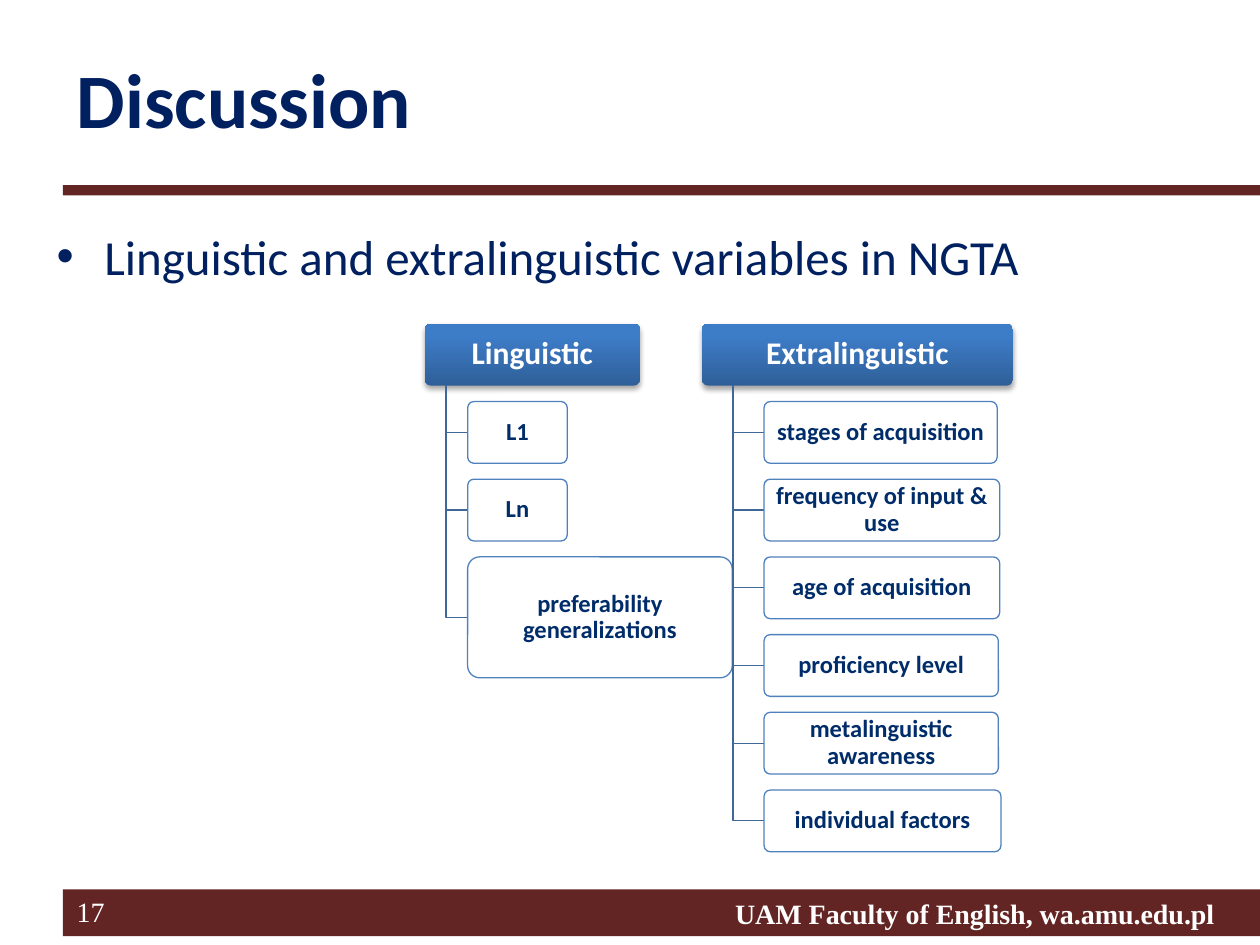
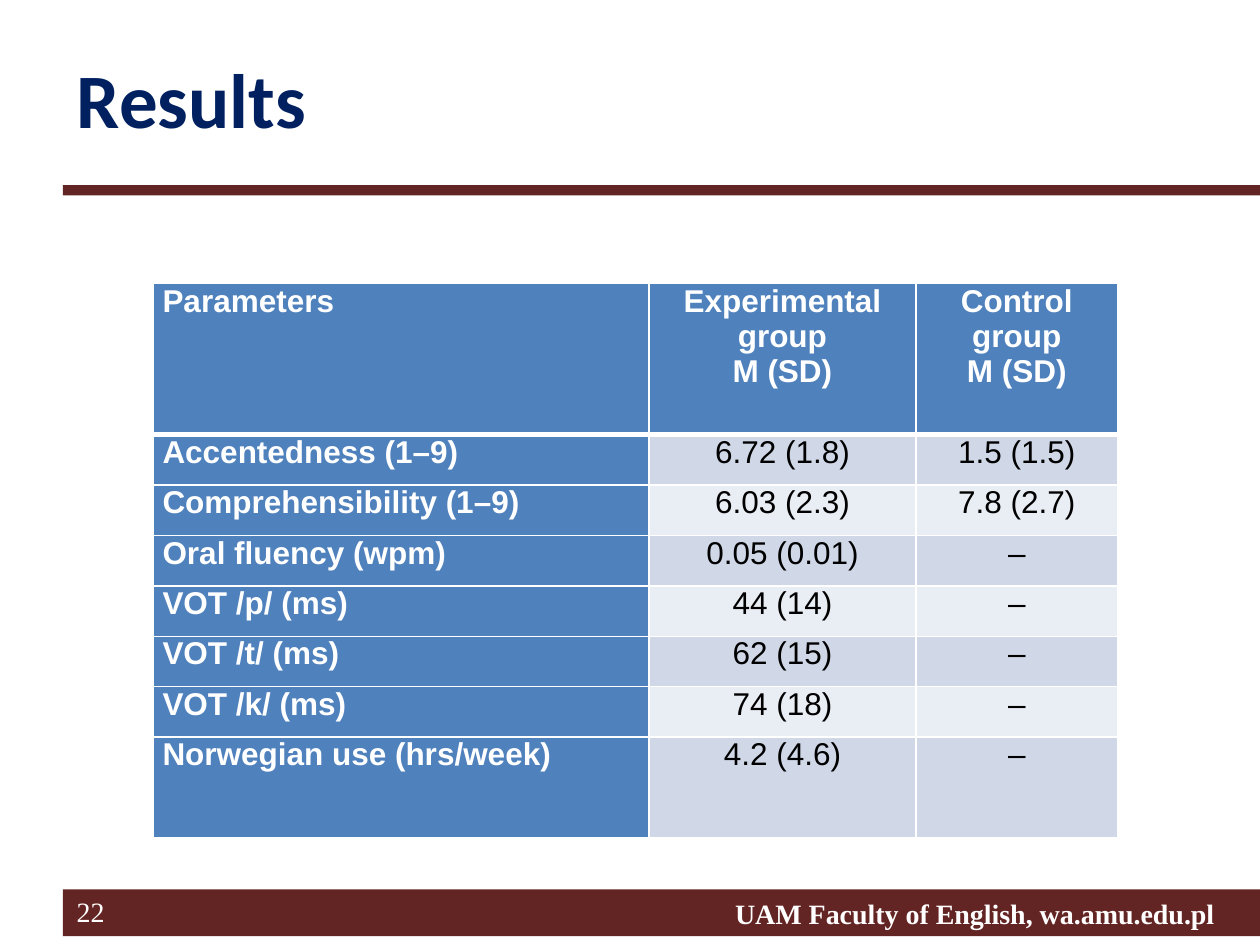
from lxml import etree
from pptx import Presentation
from pptx.dml.color import RGBColor
from pptx.enum.shapes import MSO_SHAPE
from pptx.enum.text import MSO_ANCHOR, PP_ALIGN
from pptx.oxml import parse_xml
from pptx.oxml.ns import nsdecls, qn
from pptx.util import Inches, Pt

RECTANGLE, ROUNDED = MSO_SHAPE.RECTANGLE, MSO_SHAPE.ROUNDED_RECTANGLE
TOP, MIDDLE = MSO_ANCHOR.TOP, MSO_ANCHOR.MIDDLE
LEFT, CENTER, RIGHT, JUSTIFY = PP_ALIGN.LEFT, PP_ALIGN.CENTER, PP_ALIGN.RIGHT, PP_ALIGN.JUSTIFY

COLORS = {
    "navy": "002060",
    "maroon": "632523",
    "white": "FFFFFF",
    "black": "000000",
    "blue": "4F81BD",
    "branch": "3F6797",
    "variable": "002D69",
    "header_dark": "2F5F99",
    "header_light": "3D7CC7",
    "odd_row": "D0D8E8",
    "even_row": "E9EDF4",
}


def rgb(name):
    return RGBColor.from_string(COLORS[name])


def style(frame, font, size, color, bold=False, align=LEFT, anchor=TOP):
    frame.word_wrap = True
    frame.vertical_anchor = anchor
    for paragraph in frame.paragraphs:
        paragraph.alignment = align
        paragraph.font.name = font
        paragraph.font.size = Pt(size)
        paragraph.font.bold = bold
        paragraph.font.color.rgb = rgb(color)


prs = Presentation()
prs.slide_width, prs.slide_height = Inches(10), Inches(7.5)

slides = []
for heading, number in [("Discussion", "17"), ("Results", "22")]:
    slide = prs.slides.add_slide(prs.slide_layouts[5])
    slides.append(slide)
    for top, height in [(7.06, 0.37), (1.47, 0.08)]:
        band = slide.shapes.add_shape(RECTANGLE, Inches(0.5), Inches(top), Inches(9.5), Inches(height))
        band.shadow.inherit = False
        band.fill.solid()
        band.fill.fore_color.rgb = rgb("maroon")
        band.line.fill.background()
        if top > 7:
            band.text_frame.text = "UAM Faculty of English, wa.amu.edu.pl"
            band.text_frame.margin_right = Inches(0.36)
            style(band.text_frame, "Times New Roman", 16, "white", True, RIGHT, MIDDLE)

    page = slide.shapes.add_textbox(Inches(0.51), Inches(7.05), Inches(1.34), Inches(0.37))
    page.text_frame.text = number
    style(page.text_frame, "Times New Roman", 16, "white")

    title = slide.shapes.title
    title.left, title.top, title.width, title.height = Inches(0.51), Inches(0.36), Inches(8.62), Inches(1.45)
    title.text_frame.text = heading
    style(title.text_frame, "Calibri", 44, "navy", True)

discussion, results = slides

topic = discussion.shapes.add_textbox(Inches(0.35), Inches(1.75), Inches(9.15), Inches(0.6))
topic.text_frame.text = "Linguistic and extralinguistic variables in NGTA"
bullet = topic.text_frame.paragraphs[0]._p.get_or_add_pPr()
bullet.set("marL", str(Inches(0.38)))
bullet.set("indent", str(-Inches(0.38)))
etree.SubElement(bullet, qn("a:buFont")).set("typeface", "Arial")
etree.SubElement(bullet, qn("a:buChar")).set("char", "•")
style(topic.text_frame, "Calibri", 28, "navy")

TREE_TOP, BOX_HEIGHT, ROW_STEP = 2.57, 0.49, 3.7 / 6
VARIABLES = [
    ("Linguistic", 3.37, 1.71, [
        ("L1", 0.79, BOX_HEIGHT),
        ("Ln", 0.79, BOX_HEIGHT),
        ("preferability generalizations", 2.1, 0.96),
    ]),
    ("Extralinguistic", 5.57, 2.47, [
        ("stages of acquisition", 1.85, BOX_HEIGHT),
        ("frequency of input & use", 1.87, BOX_HEIGHT),
        ("age of acquisition", 1.87, BOX_HEIGHT),
        ("proficiency level", 1.86, BOX_HEIGHT),
        ("metalinguistic awareness", 1.86, BOX_HEIGHT),
        ("individual factors", 1.88, BOX_HEIGHT),
    ]),
]

for group, group_left, group_width, members in VARIABLES:
    trunk = group_left + group_width * 0.1
    member_left = group_left + group_width * 0.2
    boxes = [(group, group_left, group_width, BOX_HEIGHT)]
    boxes += [(name, member_left, width, height) for name, width, height in members]
    for row, (name, left, width, height) in enumerate(boxes):
        top = TREE_TOP + row * ROW_STEP
        if row:
            middle = top + height / 2
            outline = discussion.shapes.build_freeform(
                Inches(trunk), Inches(TREE_TOP + BOX_HEIGHT))
            outline.add_line_segments(
                [(Inches(trunk), Inches(middle)), (Inches(left), Inches(middle))], close=False)
            branch = outline.convert_to_shape()
            branch.shadow.inherit = False
            branch.fill.background()
            branch.line.color.rgb = rgb("branch")
            branch.line.width = Pt(0.75)

        box = discussion.shapes.add_shape(ROUNDED, Inches(left), Inches(top), Inches(width), Inches(height))
        box.adjustments[0] = 0.1
        box.shadow.inherit = False
        frame = box.text_frame
        frame.text = name
        frame.margin_left = frame.margin_right = Inches(0.05)
        frame.margin_top = frame.margin_bottom = Inches(0.03)
        frame.paragraphs[0].line_spacing = 0.9
        if row:
            box.fill.solid()
            box.fill.fore_color.rgb = rgb("white")
            box.line.color.rgb = rgb("blue")
            box.line.width = Pt(0.75)
            style(frame, "Calibri", 14, "variable", True, CENTER, MIDDLE)
        else:
            box.fill.gradient()
            box.fill.gradient_angle = 90
            for stop, position, color in zip(
                    box.fill.gradient_stops, (0, 0.8), ("header_dark", "header_light")):
                stop.position = position
                stop.color.rgb = rgb(color)
            box.line.fill.background()
            box._element.spPr.find(qn("a:effectLst")).append(parse_xml(
                f'<a:outerShdw {nsdecls("a")} blurRad="{Pt(3.1)}" dist="{Pt(1.8)}" dir="5400000" '
                f'rotWithShape="0"><a:srgbClr val="{COLORS["black"]}"><a:alpha val="35000"/>'
                '</a:srgbClr></a:outerShdw>'))
            style(frame, "Calibri", 18, "white", True, CENTER, MIDDLE)

MEASURES = [
    ("Parameters", "Experimental group\nM (SD)", "Control group\nM (SD)"),
    ("Accentedness (1–9)", "6.72 (1.8)", "1.5 (1.5)"),
    ("Comprehensibility (1–9)", "6.03 (2.3)", "7.8 (2.7)"),
    ("Oral fluency (wpm)", "0.05 (0.01)", "–"),
    ("VOT /p/ (ms)", "44 (14)", "–"),
    ("VOT /t/ (ms)", "62 (15)", "–"),
    ("VOT /k/ (ms)", "74 (18)", "–"),
    ("Norwegian use (hrs/week)", "4.2 (4.6)", "–"),
]
COLUMN_WIDTHS = [3.93, 2.12, 1.6]
ROW_HEIGHTS = [1.2] + [0.4] * 6 + [0.8]

measures = results.shapes.add_table(
    len(MEASURES), len(COLUMN_WIDTHS), Inches(1.22), Inches(2.25),
    Inches(sum(COLUMN_WIDTHS)), Inches(sum(ROW_HEIGHTS))).table
for column, width in zip(measures.columns, COLUMN_WIDTHS):
    column.width = Inches(width)
for r, (texts, height) in enumerate(zip(MEASURES, ROW_HEIGHTS)):
    measures.rows[r].height = Inches(height)
    for c, text in enumerate(texts):
        cell = measures.cell(r, c)
        cell.text = text
        cell.margin_left = cell.margin_right = Inches(0.07)
        cell.margin_top = cell.margin_bottom = 0
        heading = r == 0 or c == 0
        cell.fill.solid()
        cell.fill.fore_color.rgb = rgb("blue" if heading else "odd_row" if r % 2 else "even_row")
        style(cell.text_frame, "Arial", 18, "white" if heading else "black", heading,
              CENTER if c else JUSTIFY)
        for place, edge in enumerate(("lnL", "lnR", "lnT", "lnB")):
            weight = 3 if (r, edge) in ((0, "lnB"), (1, "lnT")) else 1
            cell._tc.tcPr.insert(place, parse_xml(
                f'<a:{edge} {nsdecls("a")} w="{Pt(weight)}"><a:solidFill>'
                f'<a:srgbClr val="{COLORS["white"]}"/></a:solidFill></a:{edge}>'))

prs.save("out.pptx")
